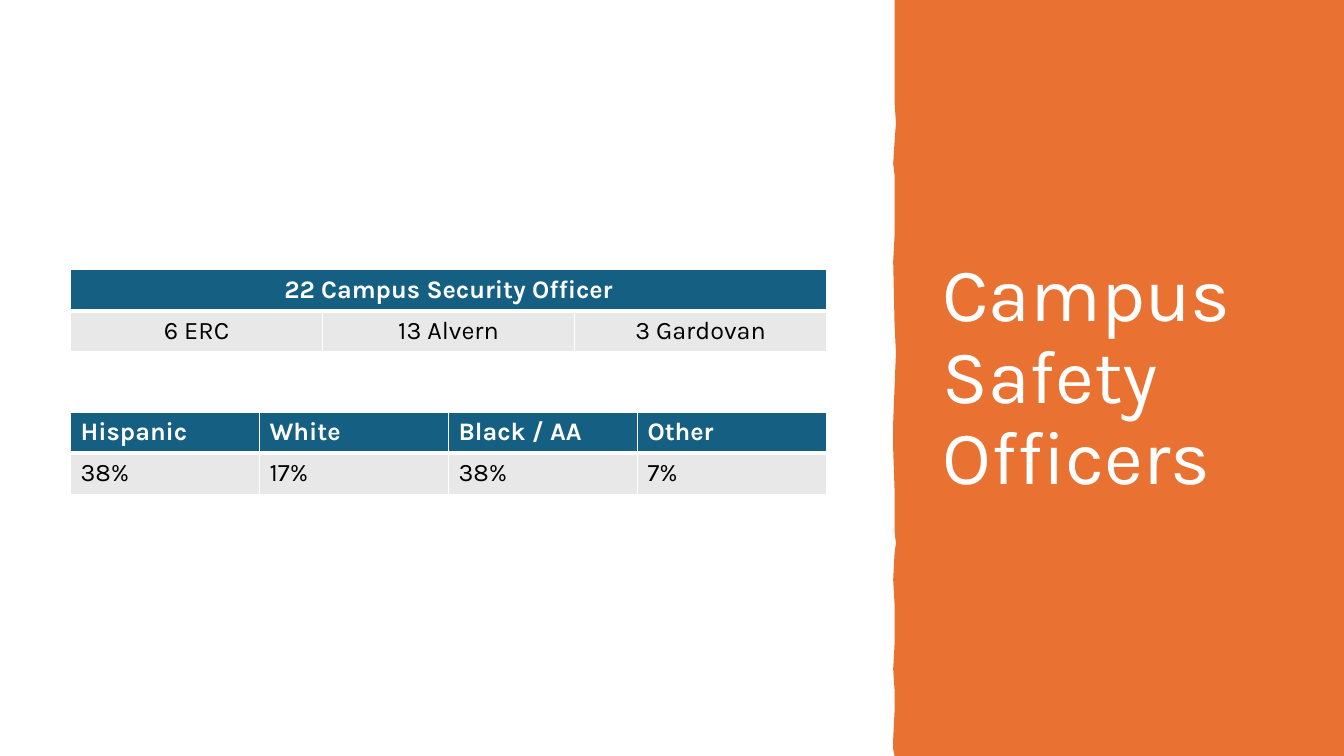
from dataclasses import dataclass

import pptx
import pptx.dml.color
import pptx.enum.text
import pptx.oxml
import pptx.oxml.ns
import pptx.util
from pptx.util import Pt

FONT = "Karla"
WHITE, BLACK = "FFFFFF", "000000"
ORANGE, BLUE, GREY = "E97132", "156082", "E8E8E8"
SLIDE_WIDTH, SLIDE_HEIGHT = 960, 540
TABLE_LEFT, TABLE_WIDTH, ROW_HEIGHT = 50.4, 540, 29.2

# Wavy left edge of the title panel, from top to bottom
PANEL_EDGE = [
    (638.6, 0), (639.4, 45), (639, 73), (639.6, 88), (639.4, 101),
    (638.4, 117), (638.6, 125), (639, 146), (638.6, 168), (638.3, 187),
    (639.4, 232), (640, 252), (639.4, 276), (638.2, 302), (638, 321),
    (638.6, 350), (639.4, 380), (640, 388), (639.4, 395), (638.2, 414),
    (638.6, 432), (639, 446), (638.6, 460), (638.3, 478), (638.6, 493),
    (638.8, 508), (638, 528), (638, 535), (638.6, 540),
]


@dataclass
class StaffTable:
    top: float
    header: list[str]
    values: list[str]
    centred: bool


STAFF_TABLES = [
    StaffTable(294.6, ["Hispanic", "White", "Black / AA", "Other"],
               ["38%", "17%", "38%", "7%"], False),
    StaffTable(192.7, ["22 Campus Security Officer"],
               ["6 ERC", "13 Alvern", "3 Gardovan"], True),
]


def colour(code: str) -> pptx.dml.color.RGBColor:
    return pptx.dml.color.RGBColor.from_string(code)


def format_font(font, size: float, code: str, bold: bool = False) -> None:
    font.name = FONT
    font.size = Pt(size)
    font.bold = bold
    font.color.rgb = colour(code)


def set_borders(cell, bottom: float) -> None:
    properties = cell._tc.get_or_add_tcPr()
    widths = {"lnL": 1, "lnR": 1, "lnT": 1, "lnB": bottom}
    for index, (side, width) in enumerate(widths.items()):
        properties.insert(index, pptx.oxml.parse_xml(
            f'<a:{side} {pptx.oxml.ns.nsdecls("a")} w="{Pt(width)}">'
            f'<a:solidFill><a:srgbClr val="{WHITE}"/></a:solidFill></a:{side}>'))


def format_cell(cell, is_header: bool, centred: bool) -> None:
    cell.fill.solid()
    cell.fill.fore_color.rgb = colour(BLUE if is_header else GREY)
    set_borders(cell, 3 if is_header else 1)
    paragraph = cell.text_frame.paragraphs[0]
    format_font(paragraph.font, 18, WHITE if is_header else BLACK, is_header)
    if centred:
        paragraph.alignment = pptx.enum.text.PP_ALIGN.CENTER
        cell.vertical_anchor = pptx.enum.text.MSO_ANCHOR.MIDDLE


def draw_panel(slide) -> None:
    builder = slide.shapes.build_freeform(SLIDE_WIDTH, 0, scale=float(Pt(1)))
    builder.add_line_segments(PANEL_EDGE + [(SLIDE_WIDTH, SLIDE_HEIGHT)], close=True)
    panel = builder.convert_to_shape()
    panel.shadow.inherit = False
    panel.fill.solid()
    panel.fill.fore_color.rgb = colour(ORANGE)
    panel.line.fill.background()


def draw_title(slide, text: str) -> None:
    title = slide.shapes.title
    title.left, title.top = Pt(666), Pt(50.4)
    title.width, title.height = Pt(244), Pt(440)
    frame = title.text_frame
    frame.text = text
    frame.word_wrap = True
    frame.auto_size = pptx.enum.text.MSO_AUTO_SIZE.NONE
    frame.vertical_anchor = pptx.enum.text.MSO_ANCHOR.MIDDLE
    paragraph = frame.paragraphs[0]
    paragraph.alignment = pptx.enum.text.PP_ALIGN.LEFT
    paragraph.line_spacing = 0.9
    format_font(paragraph.font, 54, WHITE)


def draw_table(slide, staff: StaffTable) -> None:
    column_count = len(staff.values)
    table = slide.shapes.add_table(
        2, column_count, Pt(TABLE_LEFT), Pt(staff.top),
        Pt(TABLE_WIDTH), Pt(2 * ROW_HEIGHT)).table
    for row_index, texts in enumerate([staff.header, staff.values]):
        for column_index, text in enumerate(texts):
            table.cell(row_index, column_index).text = text
        for column_index in range(column_count):
            format_cell(table.cell(row_index, column_index),
                        row_index == 0, staff.centred)
    # A single heading spans the whole table
    if len(staff.header) == 1:
        table.cell(0, 0).merge(table.cell(0, column_count - 1))


def main() -> None:
    presentation = pptx.Presentation()
    presentation.slide_width = Pt(SLIDE_WIDTH)
    presentation.slide_height = Pt(SLIDE_HEIGHT)
    slide = presentation.slides.add_slide(presentation.slide_layouts[5])

    # Title panel on the right
    draw_panel(slide)
    draw_title(slide, "Campus Safety Officers")
    # The title is drawn above the panel
    slide.shapes._spTree.append(slide.shapes.title._element)

    # Staff tables on the left
    for staff in STAFF_TABLES:
        draw_table(slide, staff)

    presentation.save("out.pptx")


if __name__ == "__main__":
    main()
